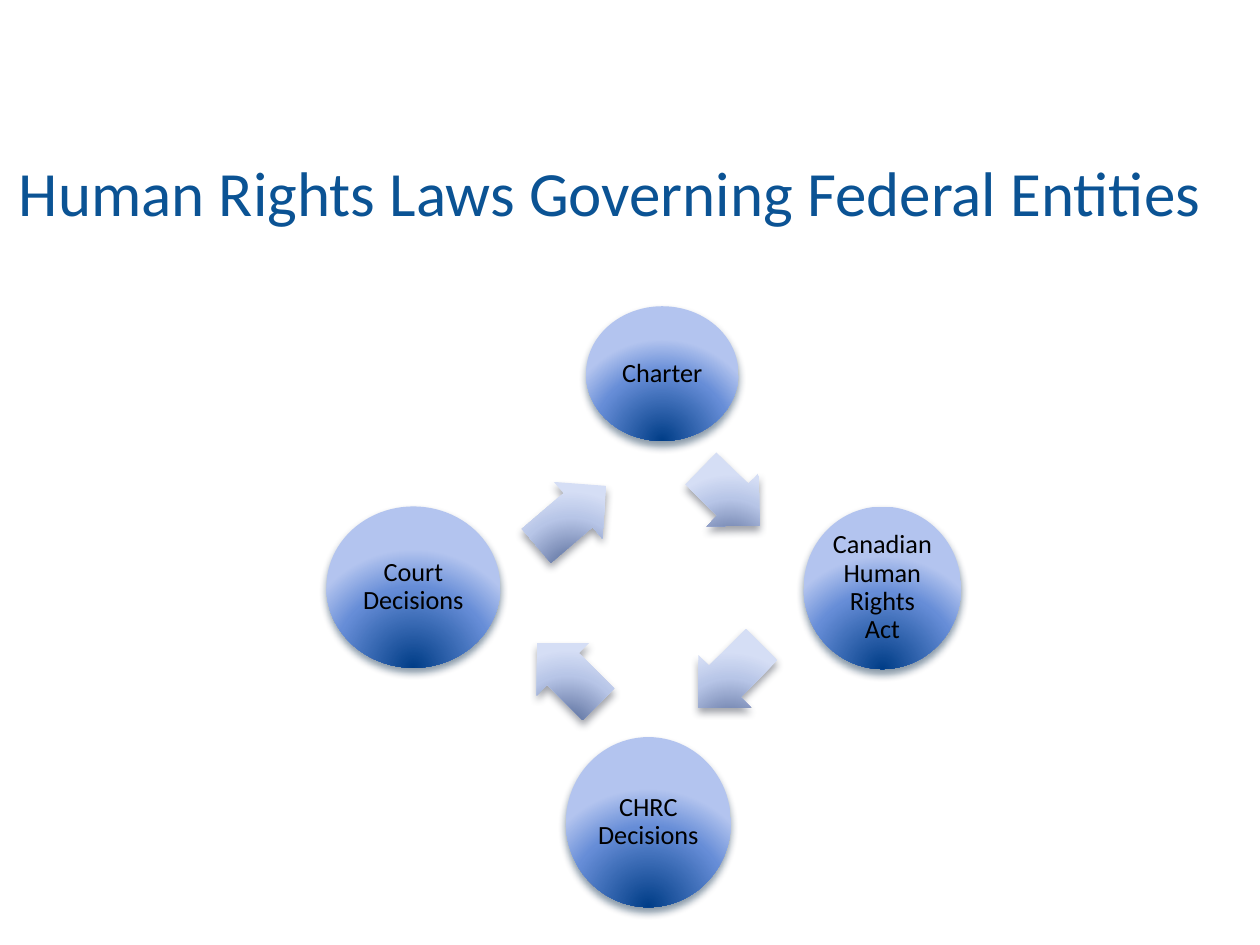
from dataclasses import dataclass

import lxml.etree
import pptx
import pptx.dml.color
import pptx.enum.shapes
import pptx.enum.text
import pptx.oxml
import pptx.oxml.ns
import pptx.util

Pt = pptx.util.Pt
RGB = pptx.dml.color.RGBColor.from_string
Kind = pptx.enum.shapes.MSO_SHAPE
Anchor = pptx.enum.text.MSO_ANCHOR
Align = pptx.enum.text.PP_ALIGN
qn = pptx.oxml.ns.qn


@dataclass(frozen=True)
class Theme:
    font: str = "Calibri"
    head: str = "0B5394"
    ink: str = "000000"
    big: int = 36
    small: int = 15
    node: tuple = ("003D87", "668DD7", "B3C4EF")
    node_shade: str = "042747"
    arrow: tuple = ("4A5F8F", "B7C5E7", "D5DEF5")
    arrow_shade: str = "3C414F"


THEME = Theme()

# label, centre x, centre y, width, height
NODES = [
    ("Charter", 378.4, 213.5, 87.1, 77),
    ("Canadian Human Rights Act", 504.2, 335.9, 90, 92.9),
    ("CHRC Decisions", 370.5, 469.8, 94.3, 97.2),
    ("Court Decisions", 236.2, 335.5, 99.4, 92.2),
]
# centre x, centre y, length, turn
ARROWS = [
    (417.2, 284, 46.8, 44.2),
    (417.2, 386.3, 51.1, 135),
    (324.4, 384.8, 49.7, 225),
    (326.5, 294.8, 52.6, 319.4),
]
BREADTH = 42.5


def style(para, size, color):
    for run in para.runs:
        run.font.name = THEME.font
        run.font.size = Pt(size)
        run.font.color.rgb = RGB(color)


def inset(frame, left, top, right, bottom):
    frame.margin_left, frame.margin_top = Pt(left), Pt(top)
    frame.margin_right, frame.margin_bottom = Pt(right), Pt(bottom)


def paint(shape, colors, shade):
    """Give a shape a radial glow from below, a soft shadow and no line."""
    shape.line.fill.background()
    stops = "".join(
        f'<a:gs pos="{pos}000"><a:srgbClr val="{color}"/></a:gs>'
        for pos, color in zip((0, 68, 100), colors))
    props = shape._element.spPr
    props.find(qn("a:ln")).addprevious(pptx.oxml.parse_xml(
        f'<a:gradFill {pptx.oxml.ns.nsdecls("a")} rotWithShape="0">'
        f'<a:gsLst>{stops}</a:gsLst><a:path path="circle">'
        '<a:fillToRect l="50000" t="130000" r="50000" b="-30000"/>'
        '</a:path></a:gradFill>'))
    shape.shadow.inherit = False
    glow = lxml.etree.SubElement(
        props.find(qn("a:effectLst")), qn("a:outerShdw"),
        blurRad=str(Pt(4.5)), dist=str(Pt(3)), dir="5400000",
        rotWithShape="0")
    color = lxml.etree.SubElement(glow, qn("a:srgbClr"), val=shade)
    lxml.etree.SubElement(color, qn("a:alpha"), val="48000")


def centred(group, kind, x, y, width, height):
    return group.shapes.add_shape(
        kind, Pt(x - width / 2), Pt(y - height / 2), Pt(width), Pt(height))


def add_title(slide, text):
    title = slide.shapes.title
    title.left, title.top = Pt(10.8), Pt(76.3)
    title.width, title.height = Pt(701.3), Pt(54.7)
    frame = title.text_frame
    frame.text = text
    frame.word_wrap = True
    frame.auto_size = pptx.enum.text.MSO_AUTO_SIZE.NONE
    frame.vertical_anchor = Anchor.BOTTOM
    inset(frame, 0, 3.6, 0, 0)
    para = frame.paragraphs[0]
    para.alignment = Align.LEFT
    style(para, THEME.big, THEME.head)


def add_node(group, label, x, y, width, height):
    node = centred(group, Kind.OVAL, x, y, width, height)
    paint(node, THEME.node, THEME.node_shade)
    frame = node.text_frame
    frame.text = label
    frame.word_wrap = True
    frame.vertical_anchor = Anchor.MIDDLE
    inset(frame, 1.5, 1.5, 1.5, 1.5)
    para = frame.paragraphs[0]
    para.alignment = Align.CENTER
    para.line_spacing = 0.9
    style(para, THEME.small, THEME.ink)


def add_arrow(group, x, y, length, turn):
    arrow = centred(group, Kind.RIGHT_ARROW, x, y, length, BREADTH)
    arrow.adjustments[0] = 0.6
    arrow.adjustments[1] = 0.5
    arrow.rotation = turn
    paint(arrow, THEME.arrow, THEME.arrow_shade)


def main():
    deck = pptx.Presentation()
    deck.slide_width, deck.slide_height = Pt(720), Pt(540)
    slide = deck.slides.add_slide(deck.slide_layouts[5])
    add_title(slide, "Human Rights Laws Governing Federal Entities")
    cycle = slide.shapes.add_group_shape()
    for node, arrow in zip(NODES, ARROWS):
        add_node(cycle, *node)
        add_arrow(cycle, *arrow)
    deck.save("out.pptx")


if __name__ == "__main__":
    main()
